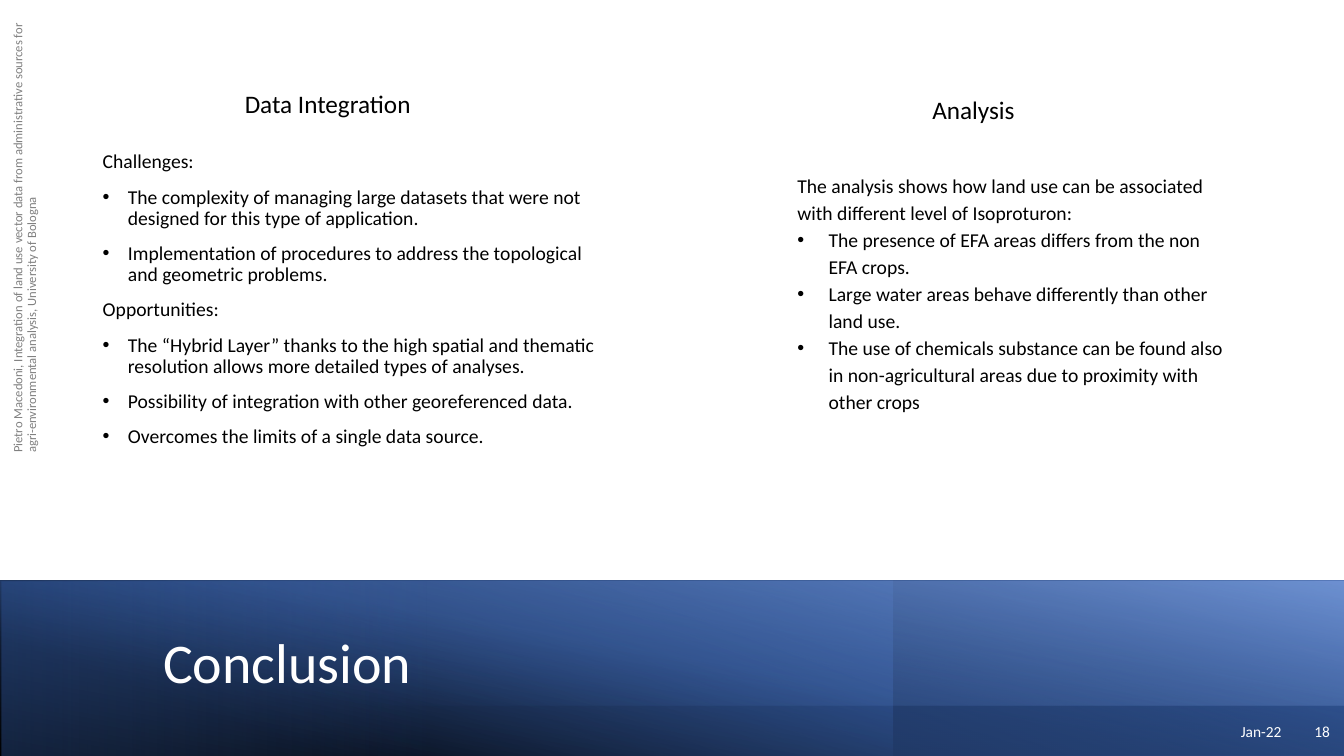
"""Build the Conclusion slide: two text columns above a layered gradient band."""
from lxml.etree import SubElement
from pptx import Presentation
from pptx.dml.color import RGBColor
from pptx.enum.shapes import MSO_SHAPE as Shape
from pptx.enum.text import MSO_ANCHOR as Anchor, PP_ALIGN as Align
from pptx.oxml.ns import qn
from pptx.util import Pt

PX = 9144
SLIDE_SIZE = (1333, 750)
FONT = "Calibri"
BLACK, WHITE, GRAY = "000000", "FFFFFF", "808080"

# box, mirrored, rotation, gradient angle, stops of (position %, colour, opacity %)
BAND_LAYERS = [
    ((0, 576, 1333, 174), True, 0, 260, [(0, "000000", 100), (54, "203864", 100)]),
    ((-2, 576, 1335, 174), True, 0, 250, [(18, "2F5597", 0), (100, "4472C4", 100)]),
    ((886, 576, 448, 174), True, 0, 260, [(23, "203864", 61), (100, "203864", 0)]),
    ((-1, 576, 1334, 124), False, 0, 280, [(18, "4472C4", 0), (100, "8FAADC", 56)]),
    ((2, 577, 846, 174), False, 180, 0, [(50, "4472C4", 0), (100, "2F5597", 41)]),
]

CREDIT = ("Pietro Macedoni, Integration of land use vector data from administrative "
          "sources for agri-environmental analysis, University of Bologna")

# each line is (bulleted, text)
INTEGRATION = [
    (False, "Challenges:"),
    (True, "The complexity of managing large datasets that were not designed for this type of application."),
    (True, "Implementation of procedures to address the topological and geometric problems."),
    (False, "Opportunities:"),
    (True, "The “Hybrid Layer” thanks to the high spatial and thematic resolution allows more "
           "detailed types of analyses."),
    (True, "Possibility of integration with other georeferenced data."),
    (True, "Overcomes the limits of a single data source."),
]
ANALYSIS = [
    (False, "The analysis shows how land use can be associated with different level of Isoproturon:"),
    (True, "The presence of EFA areas differs from the non EFA crops."),
    (True, "Large water areas behave differently than other land use."),
    (True, "The use of chemicals substance can be found also in non-agricultural areas due to "
           "proximity with other crops"),
]

FOOTER = {"size": 11, "color": WHITE, "align": Align.RIGHT, "anchor": Anchor.MIDDLE, "after": 6}
HEADING = {"size": 18, "align": Align.CENTER}
TEXTS = [
    ((-200, 214, 450, 40), [(False, CREDIT)],
     {"size": 9, "color": GRAY, "anchor": Anchor.MIDDLE, "spacing": 0.9, "after": 6, "rotation": 270}),
    ((981, 706, 300, 40), [(False, "Jan-22")], FOOTER),
    ((1280, 706, 49, 40), [(False, "18")], FOOTER),
    ((92, 50, 508, 495), INTEGRATION,
     {"size": 14, "anchor": Anchor.MIDDLE, "spacing": 0.9, "before": 10, "indent": 25}),
    ((152, 607, 1056, 107), [(False, "Conclusion")],
     {"size": 40, "color": WHITE, "anchor": Anchor.MIDDLE, "spacing": 0.9}),
    ((781, 164, 448, 252), ANALYSIS, {"size": 14, "spacing": 1.15, "indent": 31}),
    ((109, 83, 432, 40), [(False, "Data Integration")], HEADING),
    ((781, 89, 369, 40), [(False, "Analysis")], HEADING),
]


def emu(box):
    return [length * PX for length in box]


def rgb(value):
    return RGBColor.from_string(value)


def set_gradient(shape, angle, stops):
    shape.fill.gradient()
    gradient = shape._element.spPr.find(qn("a:gradFill"))
    for child in list(gradient):
        gradient.remove(child)
    stop_list = SubElement(gradient, qn("a:gsLst"))
    for position, color, opacity in stops:
        stop = SubElement(stop_list, qn("a:gs"), pos=str(position * 1000))
        tint = SubElement(stop, qn("a:srgbClr"), val=str(rgb(color)))
        if opacity < 100:
            SubElement(tint, qn("a:alpha"), val=str(opacity * 1000))
    SubElement(gradient, qn("a:lin"), ang=str(angle * 60000), scaled="0")


def add_band_layer(slide, box, mirrored, rotation, angle, stops):
    shape = slide.shapes.add_shape(Shape.RECTANGLE, *emu(box))
    shape.shadow.inherit = False
    shape.line.fill.background()
    shape.rotation = rotation
    if mirrored:
        shape._element.spPr.find(qn("a:xfrm")).set("flipH", "1")
    set_gradient(shape, angle, stops)


def add_bullet(paragraph, indent):
    properties = paragraph._p.get_or_add_pPr()
    properties.set("marL", str(indent * PX))
    properties.set("indent", str(-indent * PX))
    SubElement(properties, qn("a:buFont"), typeface="Arial")
    SubElement(properties, qn("a:buChar"), char="•")


def add_text(slide, box, lines, size, color=BLACK, align=Align.LEFT, anchor=Anchor.TOP,
             spacing=1.0, before=0, after=0, indent=0, rotation=0):
    shape = slide.shapes.add_textbox(*emu(box))
    shape.rotation = rotation
    frame = shape.text_frame
    frame.word_wrap = True
    frame.vertical_anchor = anchor
    for index, (bulleted, text) in enumerate(lines):
        paragraph = frame.add_paragraph() if index else frame.paragraphs[0]
        paragraph.alignment = align
        paragraph.line_spacing = spacing
        paragraph.space_before, paragraph.space_after = Pt(before), Pt(after)
        if bulleted:
            add_bullet(paragraph, indent)
        run = paragraph.add_run()
        run.text = text
        run.font.name, run.font.size = FONT, Pt(size)
        run.font.color.rgb = rgb(color)


def main():
    presentation = Presentation()
    presentation.slide_width, presentation.slide_height = emu(SLIDE_SIZE)
    slide = presentation.slides.add_slide(presentation.slide_layouts[6])
    for layer in BAND_LAYERS:
        add_band_layer(slide, *layer)
    for box, lines, style in TEXTS:
        add_text(slide, box, lines, **style)
    presentation.save("out.pptx")


if __name__ == "__main__":
    main()
